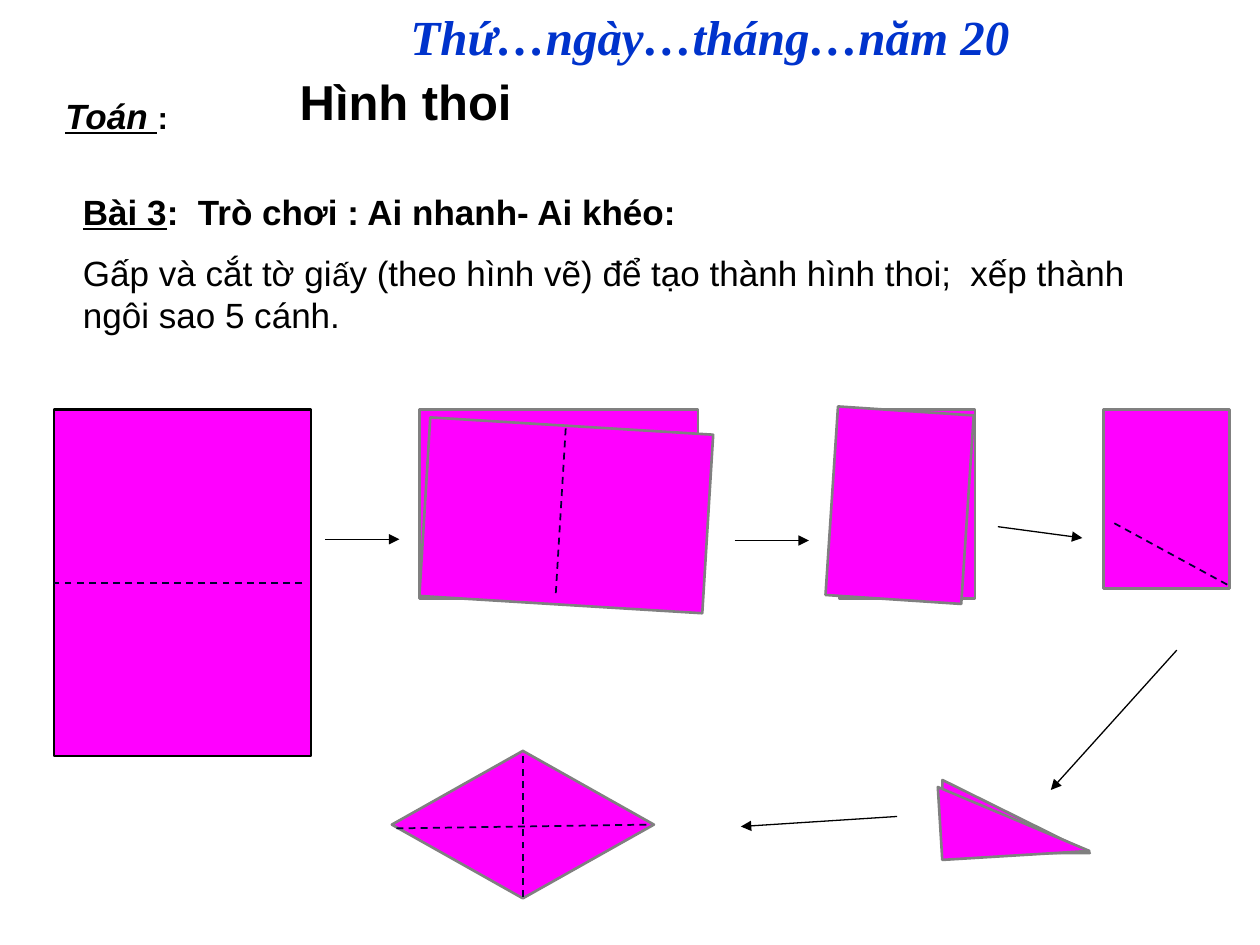
from dataclasses import dataclass

from lxml import etree
from pptx import Presentation
from pptx.dml.color import RGBColor
from pptx.enum.dml import MSO_LINE
from pptx.enum.shapes import MSO_CONNECTOR, MSO_SHAPE
from pptx.oxml.ns import qn
from pptx.util import Inches, Pt

RECT = MSO_SHAPE.RECTANGLE
TRIANGLE = MSO_SHAPE.RIGHT_TRIANGLE
DIAMOND = MSO_SHAPE.DIAMOND
STRAIGHT = MSO_CONNECTOR.STRAIGHT
DASH = MSO_LINE.DASH


@dataclass(frozen=True)
class Theme:
    paper: RGBColor = RGBColor(0xFF, 0x00, 0xFF)
    edge: RGBColor = RGBColor(0x80, 0x80, 0x80)
    ink: RGBColor = RGBColor(0x00, 0x00, 0x00)
    fold: RGBColor = RGBColor(0x00, 0x00, 0x32)
    date: RGBColor = RGBColor(0x00, 0x33, 0xCC)
    sans: str = "Arial"
    serif: str = "Times New Roman"
    title: Pt = Pt(28)
    body: Pt = Pt(20)
    small: Pt = Pt(18)
    edge_width: Pt = Pt(1.5)
    fold_width: Pt = Pt(1)
    arrow_width: Pt = Pt(0.75)


THEME = Theme()


# Building blocks
def add_text(slide, box, wrap=True):
    tf = slide.shapes.add_textbox(*map(Inches, box)).text_frame
    tf.word_wrap = wrap
    return tf


def style(font, size, color=THEME.ink, name=THEME.sans, bold=None, italic=None):
    font.size, font.name = size, name
    font.bold, font.italic = bold, italic
    font.color.rgb = color


def add_run(p, text, size=None, italic=None, underline=None):
    r = p.add_run()
    r.text = text
    r.font.size, r.font.italic, r.font.underline = size, italic, underline


def add_paper(slide, kind, box, rotation=0, edge=THEME.edge):
    sp = slide.shapes.add_shape(kind, *map(Inches, box))
    sp.rotation = rotation
    sp.shadow.inherit = False
    sp.fill.solid()
    sp.fill.fore_color.rgb = THEME.paper
    sp.line.color.rgb = edge
    sp.line.width = THEME.edge_width


def add_line(slide, start, end, color, width):
    line = slide.shapes.add_connector(STRAIGHT, *map(Inches, (*start, *end)))
    line.line.color.rgb = color
    line.line.width = width
    etree.SubElement(line._element.spPr, qn("a:effectLst"))
    return line


def add_fold(slide, start, end):
    line = add_line(slide, start, end, THEME.fold, THEME.fold_width)
    line.line.dash_style = DASH


def add_arrow(slide, start, end):
    line = add_line(slide, start, end, THEME.ink, THEME.arrow_width)
    etree.SubElement(line.line._get_or_add_ln(), qn("a:tailEnd"), type="triangle")


# Date, subject and lesson title
def add_header(slide, box):
    x, y, w, h = box
    p = add_text(slide, (x + 2.74, y, 4.96, 0.57), wrap=False).paragraphs[0]
    p.text = "Thứ…ngày…tháng…năm 20"
    style(p.font, THEME.title, THEME.date, THEME.serif, bold=True, italic=True)

    p = add_text(slide, (x, y + 0.7, 1.83, h - 0.7)).paragraphs[0]
    style(p.font, THEME.body, bold=True)
    add_run(p, "Toán ", italic=True, underline=True)
    add_run(p, ":", THEME.small)

    p = add_text(slide, (x + 1.86, y + 0.52, 3.25, 0.57)).paragraphs[0]
    p.text = "Hình thoi"
    style(p.font, THEME.title, bold=True)


# Exercise wording
def add_task(slide, box):
    tf = add_text(slide, box)
    p = tf.paragraphs[0]
    style(p.font, THEME.body, bold=True)
    add_run(p, "Bài 3", underline=True)
    add_run(p, ":  Trò chơi : Ai nhanh- Ai khéo:")

    p = tf.add_paragraph()
    p.space_before = Pt(11)
    style(p.font, THEME.body)
    add_run(p, "Gấp và cắt tờ gi")
    add_run(p, "ấ", THEME.small)
    add_run(p, "y (theo hình vẽ) để tạo thành hình thoi;  xếp thành ngôi sao 5 cánh.")


# Folding stages
def add_sheet(slide, box):
    x, y, w, h = box
    add_paper(slide, RECT, box, edge=THEME.ink)
    add_fold(slide, (x + w - 0.07, y + h / 2), (x, y + h / 2))


def add_half(slide, box):
    x, y, w, h = box
    add_paper(slide, RECT, box)
    add_paper(slide, RECT, (x + 0.04, y + 0.13, w + 0.04, h - 0.08), 3.5)
    add_fold(slide, (x + 1.16, y + 0.15), (x + 1.08, y + 1.48))


def add_quarter(slide, box):
    x, y, w, h = box
    add_paper(slide, RECT, box)
    add_paper(slide, RECT, (x - 0.06, y + 0.01, w, h), 3.8)


def add_cut_mark(slide, box):
    x, y, w, h = box
    add_paper(slide, RECT, box)
    add_fold(slide, (x + w - 0.02, y + h - 0.03), (x + 0.06, y + h - 0.53))


def add_cut_piece(slide, box):
    x, y, w, h = box
    add_paper(slide, TRIANGLE, box)
    add_paper(slide, TRIANGLE, (x - 0.02, y + 0.02, w, h), 356.5)


def add_rhombus(slide, box):
    x, y, w, h = box
    mid_x, mid_y = x + w / 2, y + h / 2
    add_paper(slide, DIAMOND, box)
    add_fold(slide, (mid_x, y + h - 0.01), (mid_x, y + 0.04))
    add_fold(slide, (x + w - 0.06, mid_y), (x + 0.01, mid_y + 0.03))


# Stages in folding order, and the arrows between them
STAGES = [
    (add_sheet, (0.43, 3.25, 2.04, 2.75)),
    (add_half, (3.33, 3.25, 2.21, 1.5)),
    (add_quarter, (6.66, 3.25, 1.08, 1.5)),
    (add_cut_mark, (8.76, 3.25, 1, 1.42)),
    (add_cut_piece, (7.48, 6.19, 1.17, 0.58)),
    (add_rhombus, (3.11, 5.96, 2.08, 1.17)),
]
ARROWS = [
    ((2.58, 4.28), (3.17, 4.28)),
    ((5.83, 4.29), (6.42, 4.29)),
    ((7.92, 4.18), (8.59, 4.27)),
    ((9.34, 5.16), (8.34, 6.27)),
    ((7.12, 6.48), (5.88, 6.56)),
]


def main():
    prs = Presentation()
    prs.slide_width, prs.slide_height = Inches(10), Inches(7.5)
    slide = prs.slides.add_slide(prs.slide_layouts[6])
    add_header(slide, (0.42, 0, 7.7, 1.13))
    add_task(slide, (0.56, 1.46, 9.02, 1.27))
    for add_stage, box in STAGES:
        add_stage(slide, box)
    for start, end in ARROWS:
        add_arrow(slide, start, end)
    prs.save("out.pptx")


if __name__ == "__main__":
    main()
